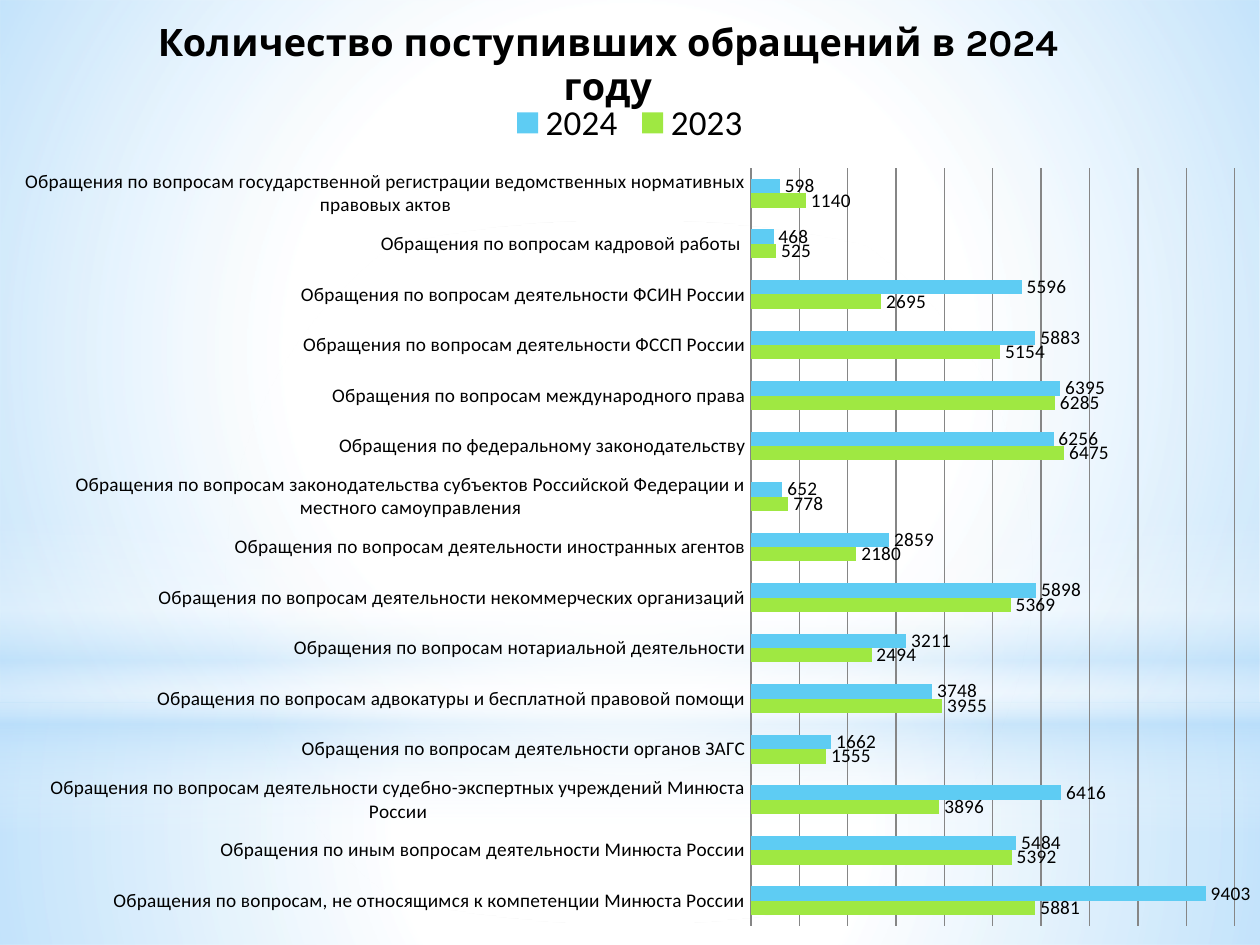
from lxml import etree
from pptx import Presentation
from pptx import util as u
from pptx.chart.data import CategoryChartData
from pptx.dml.color import RGBColor
from pptx.enum import chart as ch, shapes
from pptx.oxml import parse_xml
from pptx.oxml.ns import qn

COLORS = {"white": "FFFFFF", "sky": "B4DCFA", "text": "000000", "grid": "868686",
          "2023": "9FE842", "2024": "5ECCF3"}
A_NS = "http://schemas.openxmlformats.org/drawingml/2006/main"

# Category, 2023, 2024, from the bottom of the chart upwards
APPEALS = [
    ("Обращения по вопросам, не относящимся к компетенции Минюста России", 5881, 9403),
    ("Обращения по иным вопросам деятельности Минюста России", 5392, 5484),
    ("Обращения по вопросам деятельности судебно-экспертных учреждений Минюста России", 3896, 6416),
    ("Обращения по вопросам деятельности органов ЗАГС", 1555, 1662),
    ("Обращения по вопросам адвокатуры и бесплатной правовой помощи", 3955, 3748),
    ("Обращения по вопросам нотариальной деятельности", 2494, 3211),
    ("Обращения по вопросам деятельности некоммерческих организаций", 5369, 5898),
    ("Обращения по вопросам деятельности иностранных агентов", 2180, 2859),
    ("Обращения по вопросам законодательства субъектов Российской Федерации"
     " и местного самоуправления", 778, 652),
    ("Обращения по федеральному законодательству", 6475, 6256),
    ("Обращения по вопросам международного права", 6285, 6395),
    ("Обращения по вопросам деятельности ФССП России", 5154, 5883),
    ("Обращения по вопросам деятельности ФСИН России", 2695, 5596),
    ("Обращения по вопросам кадровой работы ", 525, 468),
    ("Обращения по вопросам государственной регистрации ведомственных"
     " нормативных правовых актов", 1140, 598),
]


class SlideBuilder:
    def __init__(self, slide):
        self.slide = slide
        self.font = "Calibri"

    def rgb(self, name):
        return RGBColor.from_string(COLORS[name])

    def set_font(self, font, size, **extra):
        for key, value in {"name": self.font, "size": u.Pt(size), **extra}.items():
            setattr(font, key, value)
        font.color.rgb = self.rgb("text")

    def glow(self, kind, top, height, stops, linear=False):
        """Full-width shape with a gradient of (position, colour, opacity) in percent."""
        shape = self.slide.shapes.add_shape(
            kind, u.Cm(0), u.Cm(top), u.Cm(25.4), u.Cm(height))
        shape.shadow.inherit = False
        shape.line.fill.background()
        shape.fill.background()
        marks = "".join(
            f'<a:gs pos="{pos * 1000}"><a:srgbClr val="{COLORS[color]}">'
            f'<a:alpha val="{opacity * 1000}"/></a:srgbClr></a:gs>'
            for pos, color, opacity in stops)
        direction = ('<a:lin ang="5400000" scaled="0"/>' if linear else
                     '<a:path path="circle"><a:fillToRect l="50000" t="50000"'
                     ' r="50000" b="50000"/></a:path>')
        gradient = parse_xml(f'<a:gradFill xmlns:a="{A_NS}" rotWithShape="1">'
                             f'<a:gsLst>{marks}</a:gsLst>{direction}</a:gradFill>')
        properties = shape._element.spPr
        properties.replace(properties.find(qn("a:noFill")), gradient)

    def place(self, part, index, **values):
        """Manual layout of a chart part, in fractions of the chart."""
        old = part.find(qn("c:layout"))
        if old is not None:
            part.remove(old)
        layout = etree.Element(qn("c:layout"))
        manual = etree.SubElement(layout, qn("c:manualLayout"))
        for tag, value in values.items():
            etree.SubElement(manual, qn(f"c:{tag}")).set("val", str(value))
        part.insert(index, layout)

    def bar_chart(self, title, rows):
        data = CategoryChartData()
        data.categories = [row[0] for row in rows]
        for column, year in enumerate(("2023", "2024"), 1):
            data.add_series(year, [row[column] for row in rows])
        chart = self.slide.shapes.add_chart(
            ch.XL_CHART_TYPE.BAR_CLUSTERED, u.Cm(0), u.Cm(0),
            u.Cm(25.4), u.Cm(19.05), data).chart
        self.set_font(chart.font, 18, name="Karla")

        # Title and legend
        heading = chart.chart_title.text_frame
        heading.text = title
        self.set_font(heading.paragraphs[0].runs[0].font, 21.6, name="Karla", bold=True)
        self.place(chart.chart_title._element, 1,
                   xMode="edge", yMode="edge", x=0.12, y=0.01)
        chart.has_legend = True
        chart.legend.position = ch.XL_LEGEND_POSITION.TOP
        chart.legend.include_in_layout = False
        self.set_font(chart.legend.font, 20)
        self.place(chart.legend._element, 1,
                   xMode="edge", yMode="edge", x=0.4, y=0.1, w=0.2, h=0.06)

        # Axes and gridlines
        names, scale = chart.category_axis, chart.value_axis
        names.major_tick_mark = ch.XL_TICK_MARK.NONE
        self.set_font(names.tick_labels.font, 11)
        for key, value in {"visible": False, "has_major_gridlines": True,
                           "minimum_scale": 0, "maximum_scale": 10000,
                           "major_unit": 1000}.items():
            setattr(scale, key, value)
        for line in (names.format.line, scale.major_gridlines.format.line):
            line.color.rgb = self.rgb("grid")
            line.width = u.Pt(0.75)

        # Bars and their values
        plot = chart.plots[0]
        plot.gap_width, plot.overlap, plot.vary_by_categories = 150, 0, False
        for series in plot.series:
            series.format.fill.solid()
            series.format.fill.fore_color.rgb = self.rgb(series.name)
            labels = series.data_labels
            labels.show_value = True
            labels.position = ch.XL_LABEL_POSITION.OUTSIDE_END
            self.set_font(labels.font, 11)
        self.place(chart._chartSpace.chart.plotArea, 0, layoutTarget="inner",
                   xMode="edge", yMode="edge", x=0.596, y=0.178, w=0.384, h=0.802)


def main():
    deck = Presentation()
    deck.slide_width, deck.slide_height = u.Cm(25.4), u.Cm(19.05)
    builder = SlideBuilder(deck.slides.add_slide(deck.slide_layouts[6]))

    # Soft sky background
    rectangle, oval = shapes.MSO_SHAPE.RECTANGLE, shapes.MSO_SHAPE.OVAL
    builder.glow(rectangle, 14.17, 4.88,
                 [(0, "white", 91), (37, "white", 76), (100, "sky", 79)])
    builder.glow(rectangle, 0, 14.17,
                 [(0, "white", 89), (48, "white", 62), (100, "sky", 79)])
    builder.glow(rectangle, 10.46, 6.35,
                 [(0, "white", 0), (29, "white", 30), (45, "sky", 40),
                  (55, "white", 26), (65, "sky", 60), (100, "white", 0)], linear=True)
    builder.glow(oval, 4.45, 14.17, [(0, "white", 100), (56, "white", 0)])

    # Appeals by subject
    builder.bar_chart("Количество поступивших обращений в 2024 году", APPEALS)
    deck.save("out.pptx")


if __name__ == "__main__":
    main()
